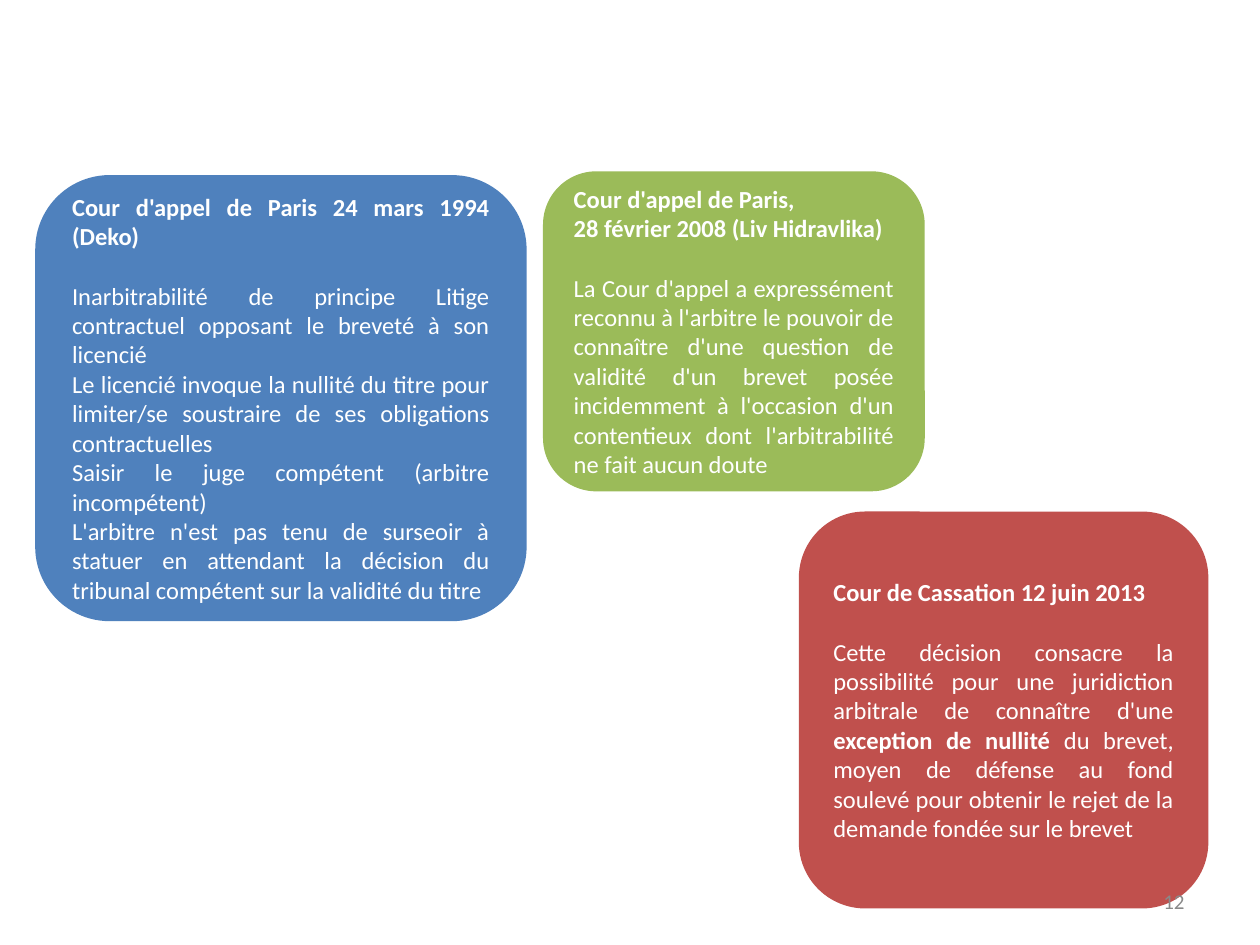
from pptx import Presentation
from pptx.dml.color import RGBColor
from pptx.enum.shapes import MSO_SHAPE as Shape
from pptx.enum.text import MSO_ANCHOR as Anchor, PP_ALIGN as Align
from pptx.util import Inches, Pt

UNIT = 0.1  # inches: a grid of 100 columns by 75 rows
GAP = 17    # points: one text line between heading and body


def tint(code):
    return RGBColor.from_string(code)


class Deck:
    font, size, ink = "Calibri", 14, "FFFFFF"

    def __init__(self, cols, rows):
        self.prs = Presentation()
        self.prs.slide_width, self.prs.slide_height = self.grid(cols, rows)
        self.slide = self.prs.slides.add_slide(self.prs.slide_layouts[6])

    def grid(self, *cells):
        return [Inches(cell * UNIT) for cell in cells]

    def run(self, para, text, bold=False, size=size, ink=ink):
        run = para.add_run()
        run.text = text
        font = run.font
        font.name, font.size, font.bold = self.font, Pt(size), bold
        font.color.rgb = tint(ink)

    def card(self, area, fill, head, body):
        """Draw a rounded card; each body paragraph is a list of (text, bold)."""
        card = self.slide.shapes.add_shape(
            Shape.ROUNDED_RECTANGLE, *self.grid(*area))
        card.shadow.inherit = False
        card.fill.solid()
        card.fill.fore_color.rgb = tint(fill)
        card.line.fill.background()
        frame = card.text_frame
        frame.word_wrap = True
        frame.vertical_anchor = Anchor.MIDDLE
        frame.margin_left = frame.margin_right = Inches(0.12)
        frame.margin_top = frame.margin_bottom = Inches(0.08)
        paras = [[(line, True)] for line in head] + body
        for i, runs in enumerate(paras):
            para = frame.add_paragraph() if i else frame.paragraphs[0]
            para.alignment = Align.JUSTIFY
            if i == len(head):
                para.space_before = Pt(GAP)
            for text, bold in runs:
                self.run(para, text, bold)

    def number(self, area, text):
        frame = self.slide.shapes.add_textbox(*self.grid(*area)).text_frame
        frame.word_wrap = True
        frame.vertical_anchor = Anchor.MIDDLE
        para = frame.paragraphs[0]
        para.alignment = Align.RIGHT
        self.run(para, text, size=12, ink="898989")


def main():
    deck = Deck(100, 75)
    deck.card(
        (2.8, 13.9, 39, 35.4), "4F81BD",
        ["Cour d'appel de Paris 24 mars 1994 (Deko)"],
        [[("Inarbitrabilité de principe Litige contractuel opposant "
           "le breveté à son licencié", False)],
         [("Le licencié invoque la nullité du titre pour limiter/se "
           "soustraire de ses obligations contractuelles", False)],
         [("Saisir le juge compétent (arbitre incompétent)", False)],
         [("L'arbitre n'est pas tenu de surseoir à statuer en attendant la "
           "décision du tribunal compétent sur la validité du titre", False)]])
    deck.card(
        (43.1, 13.6, 30.3, 25.4), "9BBB59",
        ["Cour d'appel de Paris,", "28 février 2008 (Liv Hidravlika)"],
        [[("La Cour d'appel a expressément reconnu à l'arbitre le pouvoir de "
           "connaître d'une question de validité d'un brevet posée "
           "incidemment à l'occasion d'un contentieux dont l'arbitrabilité "
           "ne fait aucun doute", False)]])
    deck.card(
        (63.4, 40.6, 32.5, 31.5), "C0504D",
        ["Cour de Cassation 12 juin 2013"],
        [[("Cette décision consacre la possibilité pour une juridiction "
           "arbitrale de connaître d'une ", False),
          ("exception de nullité", True),
          (" du brevet, moyen de défense au fond soulevé pour obtenir le "
           "rejet de la demande fondée sur le brevet", False)]])
    deck.number((71.7, 69.5, 23.3, 4), "12")
    deck.prs.save("out.pptx")


if __name__ == "__main__":
    main()
